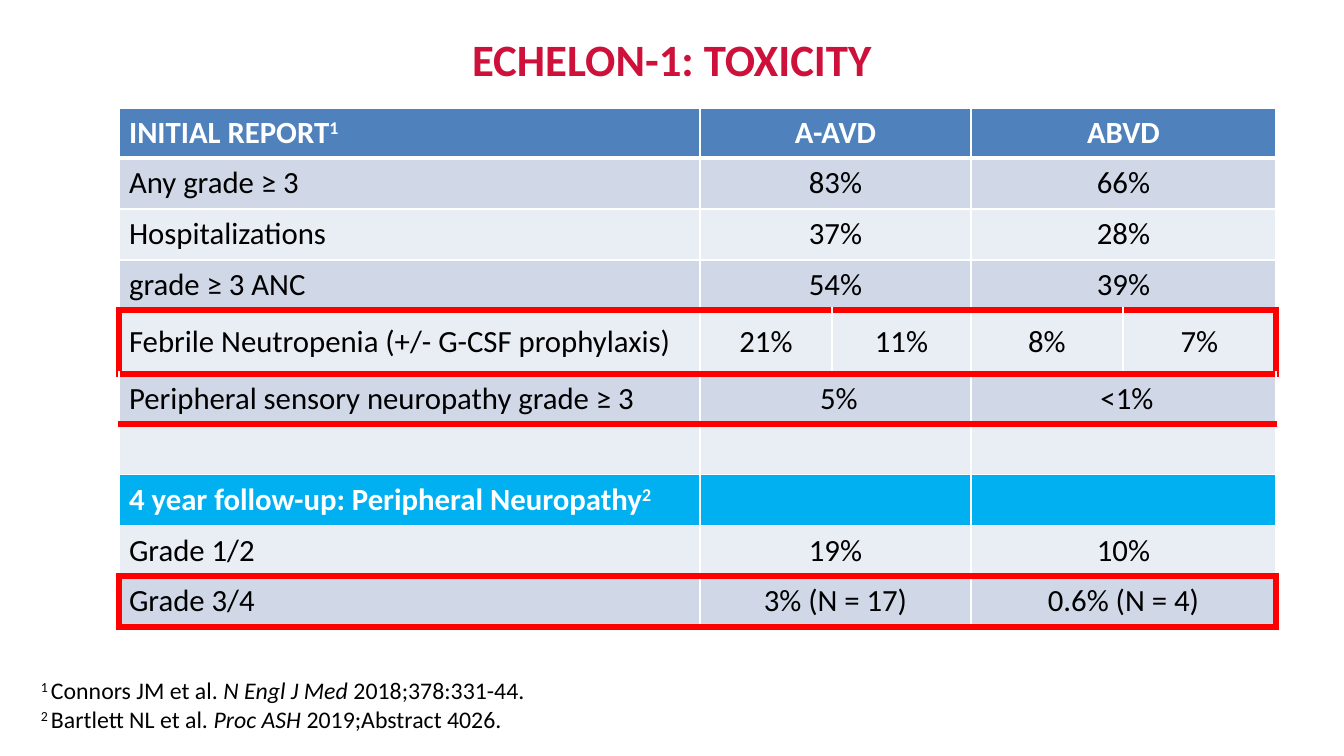
from lxml import etree
from pptx import Presentation
from pptx.dml.color import RGBColor
from pptx.enum.text import MSO_ANCHOR, MSO_AUTO_SIZE, PP_ALIGN
from pptx.oxml.ns import qn
from pptx.util import Pt

EMU_PER_INCH = 914400
PX_PER_INCH = 100.8
CENTER, LEFT = PP_ALIGN.CENTER, PP_ALIGN.LEFT
MIDDLE = MSO_ANCHOR.MIDDLE
FIT_SHAPE = MSO_AUTO_SIZE.SHAPE_TO_FIT_TEXT
COLORS = {
    "title": "CD113B", "header": "4F81BD", "follow_up": "00B0F0",
    "dark_band": "D0D8E8", "light_band": "E9EDF4",
    "white": "FFFFFF", "black": "000000", "red": "FF0000",
}


def px(*lengths):
    """Turn whole pixels into a list of EMU."""
    return [round(length * EMU_PER_INCH / PX_PER_INCH) for length in lengths]


def add_span(para, text, size, color, bold=False, italic=False, raised=False):
    span = para.add_run()
    span.text = text
    font = span.font
    font.name, font.size = "Calibri", Pt(size)
    font.bold, font.italic = bold, italic
    font.color.rgb = RGBColor.from_string(COLORS[color])
    if raised:
        span._r.get_or_add_rPr().set("baseline", "30000")


deck = Presentation()
deck.slide_width, deck.slide_height = px(1344, 756)
page = deck.slides.add_slide(deck.slide_layouts[6])

# Title
title_box = page.shapes.add_textbox(*px(67, 19, 1210, 79))
title_box.text_frame.word_wrap = True
title_box.text_frame.vertical_anchor = MIDDLE
title_para = title_box.text_frame.paragraphs[0]
title_para.alignment = CENTER
add_span(title_para, "ECHELON-1:\u00a0TOXICITY", 32, "title", bold=True)

# Toxicity table: label, footnote mark, then values (two arms, or four when split)
ROWS = [
    ("INITIAL REPORT", "1", ["A-AVD", "ABVD"]),
    ("Any grade ≥ 3", "", ["83%", "66%"]),
    ("Hospitalizations", "", ["37%", "28%"]),
    ("grade ≥ 3 ANC", "", ["54%", "39%"]),
    ("Febrile Neutropenia (+/- G-CSF prophylaxis)", "", ["21%", "11%", "8%", "7%"]),
    ("Peripheral sensory neuropathy grade ≥ 3", "", [" 5%", " <1%"]),
    ("", "", ["", ""]),
    ("4 year follow-up: Peripheral Neuropathy", "2", ["", ""]),
    ("Grade 1/2", "", ["19%", "10%"]),
    ("Grade 3/4", "", ["3% (N = 17)", "0.6% (N = 4)"]),
]
COLUMN_WIDTHS = [581, 132, 139, 152, 153]
ROW_HEIGHTS = [50, 51, 51, 50, 64, 50, 51, 51, 50, 51]
HEADING_FILLS = {0: "header", 7: "follow_up"}
THIN, RED = ("white", 1), ("red", 4.5)
LINES_BELOW = {0: ("white", 3), 3: RED, 4: RED, 5: RED, 8: RED, 9: RED}
BOXED_ROWS = {4, 9}

table = page.shapes.add_table(
    len(ROWS), len(COLUMN_WIDTHS),
    *px(119, 108, sum(COLUMN_WIDTHS), sum(ROW_HEIGHTS))).table
table.first_row = table.horz_banding = False
for column, width in zip(table.columns, px(*COLUMN_WIDTHS)):
    column.width = width
for table_row, height in zip(table.rows, px(*ROW_HEIGHTS)):
    table_row.height = height

for row, (label, mark, values) in enumerate(ROWS):
    heading = row in HEADING_FILLS
    fill = HEADING_FILLS.get(row, "dark_band" if row % 2 else "light_band")
    text_color = "white" if heading else "black"
    step = 4 // len(values)
    last = 5 - step

    for col in range(5):
        cell = table.cell(row, col)
        cell.vertical_anchor = MIDDLE
        boxed = row in BOXED_ROWS
        borders = {
            "lnL": RED if boxed and col == 0 else THIN,
            "lnR": RED if boxed and col >= last else THIN,
            "lnT": LINES_BELOW.get(row - 1, THIN),
            "lnB": LINES_BELOW.get(row, THIN),
        }
        cell_props = cell._tc.get_or_add_tcPr()
        for side, (color, points) in borders.items():
            line = etree.SubElement(cell_props, qn(f"a:{side}"), w=str(Pt(points)))
            solid = etree.SubElement(line, qn("a:solidFill"))
            etree.SubElement(solid, qn("a:srgbClr"), val=COLORS[color])
        cell.fill.solid()
        cell.fill.fore_color.rgb = RGBColor.from_string(COLORS[fill])

    entries = [(0, label, LEFT)]
    entries += [(1 + i * step, value, CENTER) for i, value in enumerate(values)]
    for col, text, alignment in entries:
        cell = table.cell(row, col)
        if col and step == 2:
            cell.merge(table.cell(row, col + 1))
        para = cell.text_frame.paragraphs[0]
        para.alignment = alignment
        if text:
            add_span(para, text, 22, text_color, bold=heading)
        if col == 0 and mark:
            add_span(para, mark, 22, text_color, bold=True, raised=True)

# References
REFERENCES = [
    ("1 ", "Connors JM et al. ", "N Engl J Med", " 2018;378:331-44."),
    ("2 ", "Bartlett NL et al. ", "Proc ASH", " 2019;Abstract 4026."),
]
reference_box = page.shapes.add_textbox(*px(31, 671, 509, 68))
frame = reference_box.text_frame
frame.word_wrap = False
frame.auto_size = FIT_SHAPE
for i, (mark, authors, journal, citation) in enumerate(REFERENCES):
    para = frame.add_paragraph() if i else frame.paragraphs[0]
    add_span(para, mark, 17, "black", raised=True)
    add_span(para, authors, 17, "black")
    add_span(para, journal, 17, "black", italic=True)
    add_span(para, citation, 17, "black")

deck.save("out.pptx")
